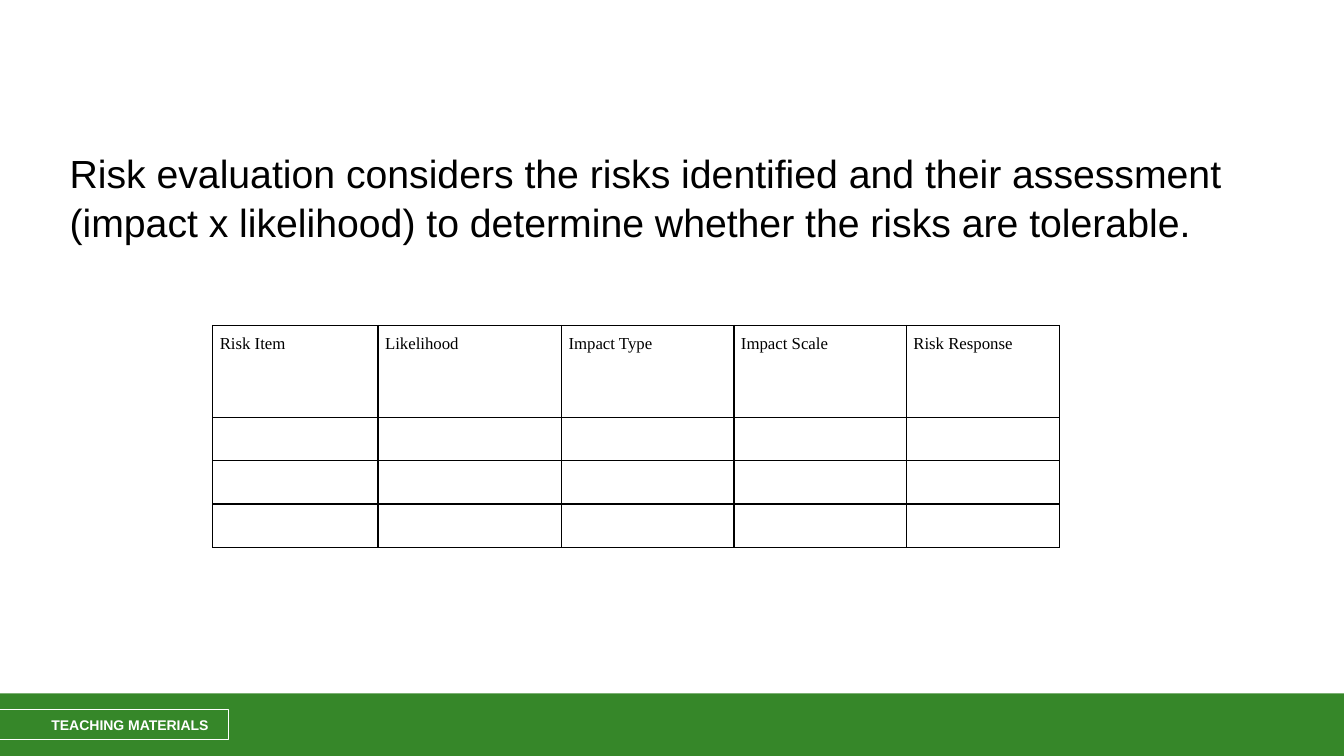
import pptx
import pptx.util
import pptx.dml.color
import pptx.enum.shapes
import pptx.enum.text
import pptx.oxml.ns
import lxml.etree

EMU_PER_PX = 9144
THEME = {
    "green": pptx.dml.color.RGBColor.from_string("368729"),
    "white": pptx.dml.color.RGBColor.from_string("FFFFFF"),
    "black": pptx.dml.color.RGBColor.from_string("000000"),
    "sans": "Arial",
    "serif": "Times New Roman",
    "body_size": 28,
    "table_size": 12,
    "label_size": 10,
}


def px(*lengths):
    return [pptx.util.Emu(length * EMU_PER_PX) for length in lengths]


def style_text(paragraph, font_name, size, color, bold=False):
    for run in paragraph.runs:
        run.font.name = font_name
        run.font.size = pptx.util.Pt(size)
        run.font.color.rgb = color
        run.font.bold = bold


presentation = pptx.Presentation()
presentation.slide_width, presentation.slide_height = px(1333, 750)
slide = presentation.slides.add_slide(presentation.slide_layouts[1])
slide.background.fill.solid()
slide.background.fill.fore_color.rgb = THEME["white"]
title = slide.shapes.title.element
title.getparent().remove(title)

rectangle = pptx.enum.shapes.MSO_SHAPE.RECTANGLE
footer_bar = slide.shapes.add_shape(rectangle, *px(0, 688, 1333, 62))
footer_bar.shadow.inherit = False
footer_bar.fill.solid()
footer_bar.fill.fore_color.rgb = THEME["green"]
footer_bar.line.fill.background()

footer_label = slide.shapes.add_shape(rectangle, *px(-28, 704, 255, 30))
footer_label.shadow.inherit = False
footer_label.fill.background()
footer_label.line.color.rgb = THEME["white"]
footer_label.line.width = pptx.util.Pt(0.75)
label_frame = footer_label.text_frame
label_frame.margin_left, label_frame.margin_top, label_frame.margin_right, label_frame.margin_bottom = px(79, 5, 10, 5)
label_frame.vertical_anchor = pptx.enum.text.MSO_ANCHOR.MIDDLE
label_frame.text = "TEACHING MATERIALS"
label_frame.paragraphs[0].alignment = pptx.enum.text.PP_ALIGN.LEFT
style_text(label_frame.paragraphs[0], THEME["sans"], THEME["label_size"], THEME["white"], True)

body = slide.placeholders[1]
body.left, body.top, body.width, body.height = px(59, 138, 1181, 472)
body_frame = body.text_frame
body_frame.auto_size = pptx.enum.text.MSO_AUTO_SIZE.NONE
body_frame.word_wrap = True
body_frame.margin_top = px(8)[0]
body_frame.text = (
    "Risk evaluation considers the risks identified and their assessment "
    "(impact x likelihood) to determine whether the risks are tolerable."
)
statement = body_frame.paragraphs[0]
statement_properties = statement._p.get_or_add_pPr()
statement_properties.set("marL", "0")
statement_properties.set("indent", "0")
lxml.etree.SubElement(statement_properties, pptx.oxml.ns.qn("a:buNone"))
statement.space_before = pptx.util.Pt(0)
statement.line_spacing = 1.04
style_text(statement, THEME["sans"], THEME["body_size"], THEME["black"])

headings = ["Risk Item", "Likelihood", "Impact Type", "Impact Scale", "Risk Response"]
column_widths = [164, 182, 171, 171, 152]
row_heights = [91, 43, 43, 43]
risk_frame = slide.shapes.add_table(
    len(row_heights), len(headings), *px(211, 323, sum(column_widths), sum(row_heights))
)
risk_table = risk_frame.table
risk_table.first_row = False
risk_table.horz_banding = False
for column, width in zip(risk_table.columns, px(*column_widths)):
    column.width = width
for row, height in zip(risk_table.rows, px(*row_heights)):
    row.height = height

for cell in risk_table.iter_cells():
    cell_properties = cell._tc.get_or_add_tcPr()
    for side in ("lnL", "lnR", "lnT", "lnB"):
        border = lxml.etree.SubElement(cell_properties, pptx.oxml.ns.qn("a:" + side), w=str(pptx.util.Pt(1)))
        border_fill = lxml.etree.SubElement(border, pptx.oxml.ns.qn("a:solidFill"))
        lxml.etree.SubElement(border_fill, pptx.oxml.ns.qn("a:srgbClr"), val=str(THEME["black"]))
    cell.fill.background()

for cell, heading in zip(risk_table.rows[0].cells, headings):
    cell.margin_left, cell.margin_top, cell.margin_right, cell.margin_bottom = px(7, 0, 7, 0)
    cell.text_frame.text = heading
    paragraph = cell.text_frame.paragraphs[0]
    paragraph.line_spacing = 1.5
    paragraph.space_after = pptx.util.Pt(8)
    style_text(paragraph, THEME["serif"], THEME["table_size"], THEME["black"])

presentation.save("out.pptx")
